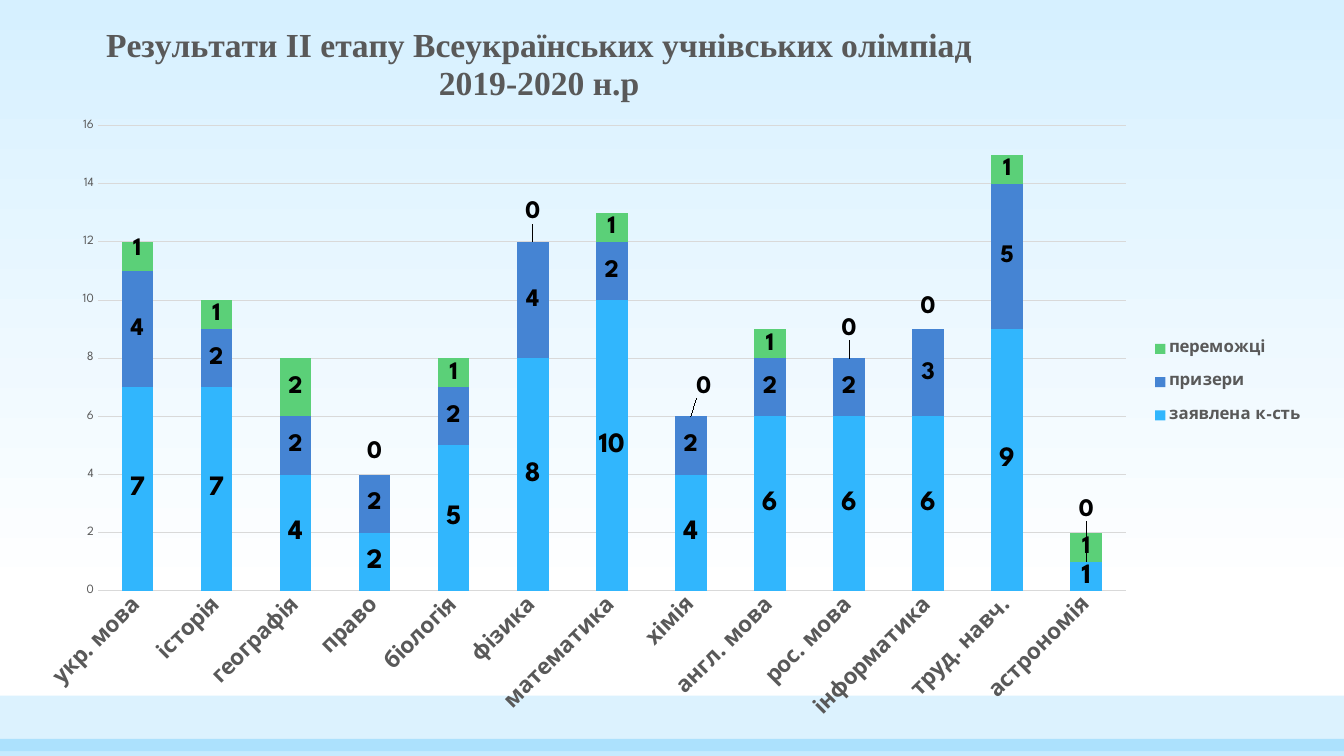
import pptx
import pptx.chart.data
import pptx.dml.color
import pptx.enum.chart
import pptx.enum.shapes
import pptx.oxml
import pptx.oxml.ns
import pptx.util

RGBColor = pptx.dml.color.RGBColor
Cm, Pt = pptx.util.Cm, pptx.util.Pt
qn = pptx.oxml.ns.qn

SKY = RGBColor(0x31, 0xB6, 0xFD)
BLUE = RGBColor(0x45, 0x84, 0xD3)
GREEN = RGBColor(0x5B, 0xD0, 0x78)
PALE = RGBColor(0xD6, 0xF0, 0xFF)
WHITE = RGBColor(0xFF, 0xFF, 0xFF)
BLACK = RGBColor(0, 0, 0)
GREY = RGBColor(0x59, 0x59, 0x59)
RULE = RGBColor(0xD9, 0xD9, 0xD9)
SANS, SERIF = "League Spartan", "Times New Roman"


def style(font, size, color=GREY, bold=True, name=SANS):
    look = {"size": Pt(size), "bold": bold, "name": name}
    for key, value in look.items():
        setattr(font, key, value)
    font.color.rgb = color


def place(prior, **values):
    """Put a manual chart layout right after the element prior."""
    for old in prior.getparent().findall(qn("c:layout")):
        old.getparent().remove(old)
    parts = "".join(f'<c:{key} val="{value}"/>' for key, value in values.items())
    prior.addnext(pptx.oxml.parse_xml(
        f'<c:layout {pptx.oxml.ns.nsdecls("c")}>'
        f"<c:manualLayout>{parts}</c:manualLayout></c:layout>"))


deck = pptx.Presentation()
deck.slide_width, deck.slide_height = Cm(33.87), Cm(19.05)
slide = deck.slides.add_slide(deck.slide_layouts[6])

# Background and bottom bands
back = slide.background.fill
back.gradient()
back.gradient_angle = 270
for stop, color, spot in zip(back.gradient_stops, (PALE, WHITE), (0, 0.79)):
    stop.color.rgb = color
    stop.position = spot

for top, height, alpha in ((17.53, 1.4, 17), (18.62, 0.43, 28)):
    band = slide.shapes.add_shape(
        pptx.enum.shapes.MSO_SHAPE.RECTANGLE,
        0, Cm(top), deck.slide_width, Cm(height))
    band.shadow.inherit = False
    band.line.fill.background()
    band.fill.solid()
    band.fill.fore_color.rgb = SKY
    tint = band.element.find(".//" + qn("a:srgbClr"))
    tint.append(pptx.oxml.parse_xml(
        f'<a:alpha {pptx.oxml.ns.nsdecls("a")} val="{alpha * 1000}"/>'))

# Chart data
data = pptx.chart.data.CategoryChartData(number_format="General")
data.categories = [
    "укр. мова", "історія", "географія", "право", "біологія", "фізика",
    "математика", "хімія", "англ. мова", "рос. мова", "інформатика",
    "труд. навч.", "астрономія"]
# Name, values, color, label size, label shifts by point
rows = (
    ("заявлена к-сть", (7, 7, 4, 2, 5, 8, 10, 4, 6, 6, 6, 9, 1), SKY, 20, {}),
    ("призери", (4, 2, 2, 2, 2, 4, 2, 2, 2, 2, 3, 5, 0), BLUE, 18,
     {12: (0, -0.07)}),
    ("переможці", (1, 1, 2, 0, 1, 0, 1, 0, 1, 0, 0, 1, 1), GREEN, 18,
     {0: (0, -0.01), 3: (0, -0.03), 5: (0, -0.04), 7: (0.01, -0.04),
      9: (0, -0.04), 10: (0, -0.03)}),
)
for name, values, *rest in rows:
    data.add_series(name, values)

chart = slide.shapes.add_chart(
    pptx.enum.chart.XL_CHART_TYPE.COLUMN_STACKED,
    Cm(0.64), 0, Cm(32.59), Cm(18.52), data).chart
style(chart.font, 10, BLACK, False)
root = chart.element
plot = chart.plots[0]
plot.vary_by_categories = False
plot.gap_width, plot.overlap = 150, 100

# Series and labels
for series, (name, values, color, size, shifts) in zip(plot.series, rows):
    series.format.fill.solid()
    series.format.fill.fore_color.rgb = color
    labels = series.data_labels
    labels.show_value = True
    style(labels.font, size, BLACK)
    for index in shifts:
        style(series.points[index].data_label.font, size, BLACK)

for ser, row in zip(root.xpath(".//c:ser"), rows):
    for label in ser.findall(".//" + qn("c:dLbl")):
        mark = label.find(qn("c:idx"))
        x, y = row[-1][int(mark.get("val"))]
        place(mark, x=x, y=y)

# Axes
cats, vals = chart.category_axis, chart.value_axis
none = pptx.enum.chart.XL_TICK_MARK.NONE
for axis, size, bold in ((cats, 16, True), (vals, 9, False)):
    axis.major_tick_mark = axis.minor_tick_mark = none
    axis.format.line.fill.background()
    style(axis.tick_labels.font, size, GREY, bold)
root.xpath(".//c:catAx/c:txPr/a:bodyPr")[0].set("rot", "-2700000")
scale = {"minimum_scale": 0, "maximum_scale": 16, "major_unit": 2,
         "has_major_gridlines": True}
for key, value in scale.items():
    setattr(vals, key, value)
grid = vals.major_gridlines.format.line
grid.color.rgb = RULE
grid.width = Pt(0.75)

# Title
chart.has_title = True
frame = chart.chart_title.text_frame
frame.text = "Результати ІІ етапу Всеукраїнських учнівських олімпіад\n2019-2020 н.р"
for line in frame.paragraphs:
    style(line.runs[0].font, 24, name=SERIF)
place(root.xpath(".//c:title/c:tx")[0],
      xMode="edge", yMode="edge", x=0.06, y=0.03)

# Legend
chart.has_legend = True
legend = chart.legend
legend.position = pptx.enum.chart.XL_LEGEND_POSITION.RIGHT
legend.include_in_layout = False
style(legend.font, 12)
place(root.xpath(".//c:legend/c:legendPos")[0],
      xMode="edge", yMode="edge", x=0.87, y=0.44, w=0.12, h=0.16)

# Plot area
plane = root.xpath(".//c:plotArea")[0]
for old in plane.findall(qn("c:layout")):
    plane.remove(old)
place(plane[0], layoutTarget="inner", xMode="edge", yMode="edge",
      x=0.056, y=0.171, w=0.795, h=0.633)
plane.insert(0, plane.find(qn("c:layout")))

deck.save("out.pptx")
